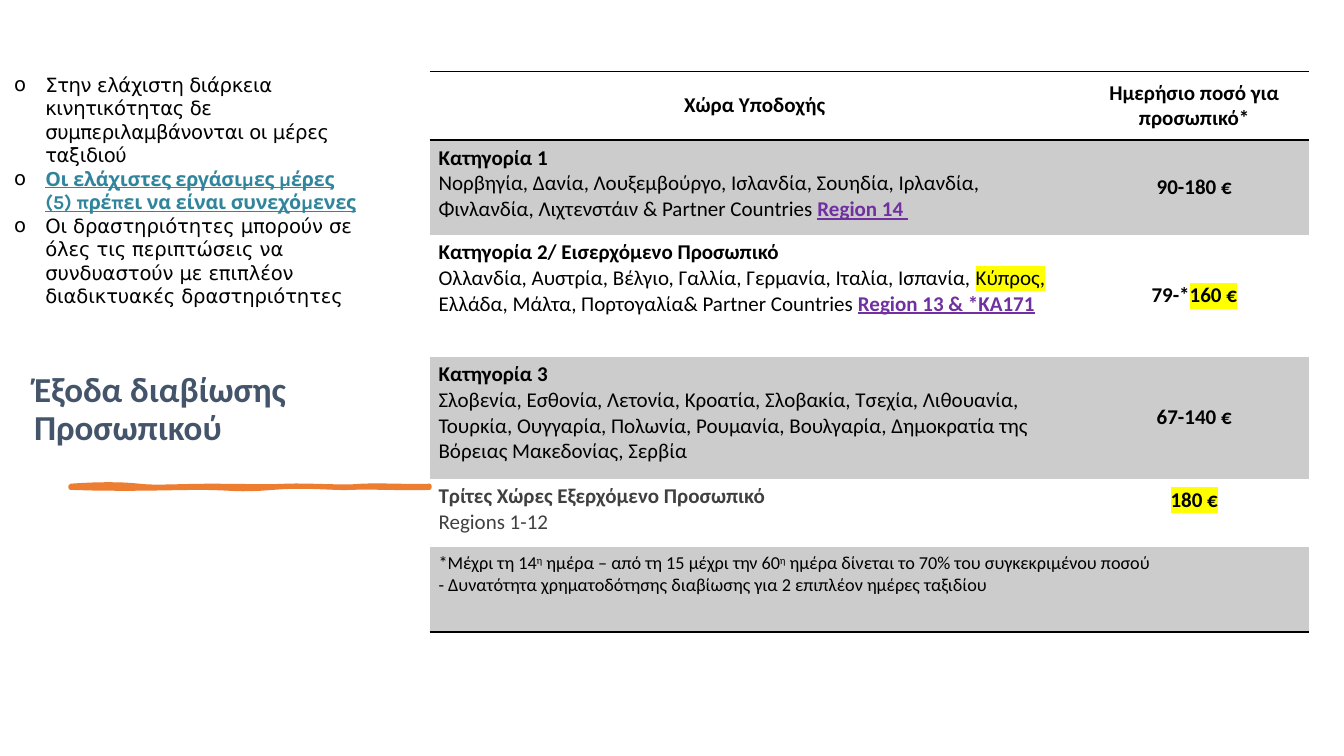
from pptx import Presentation, util as u
from pptx.dml.color import RGBColor
from pptx.enum import text
from pptx.oxml.ns import qn
from lxml import etree

PX = 9144  # 100 px to the inch
THEME = {
    "table_font": "Calibri", "rules_font": "DejaVu Sans", "key_rule_font": "Karla",
    "title_size": 25, "table_size": 15, "rules_size": 14, "note_size": 13,
    "ink": "000000", "title": "44546A", "muted": "404040", "region": "7030A0",
    "key_rule": "30859C", "brush": "ED7D31", "band": "CCCCCC", "marker": "FFFF00",
}
STYLES = {
    "plain": {},
    "bold": {"bold": True},
    "marked": {"marked": True},
    "bold marked": {"bold": True, "marked": True},
    "region": {"bold": True, "underline": True, "color": "region"},
    "muted": {"color": "muted"},
    "muted bold": {"bold": True, "color": "muted"},
    "note": {"size": "note_size"},
    "note raised": {"size": "note_size", "raised": True},
    "title": {"bold": True, "size": "title_size", "color": "title"},
    "rule": {"font": "rules_font", "size": "rules_size"},
    "key rule": {"font": "key_rule_font", "size": "rules_size", "color": "key_rule",
                 "bold": True, "underline": True},
}


def write(frame, paragraphs, align=text.PP_ALIGN.LEFT):
    """Fill a text frame with paragraphs made of (words, style) pairs."""
    for i, pairs in enumerate(paragraphs):
        paragraph = frame.paragraphs[0] if i == 0 else frame.add_paragraph()
        paragraph.alignment = align
        for words, style_name in pairs:
            style = STYLES[style_name]
            run = paragraph.add_run()
            run.text = words
            font = run.font
            font.name = THEME[style.get("font", "table_font")]
            font.size = u.Pt(THEME[style.get("size", "table_size")])
            font.bold = style.get("bold", False)
            font.underline = style.get("underline", False)
            font.color.rgb = RGBColor.from_string(THEME[style.get("color", "ink")])
            props = run._r.get_or_add_rPr()
            if style.get("raised"):
                props.set("baseline", "30000")
            if style.get("marked"):
                highlight = etree.Element(qn("a:highlight"))
                etree.SubElement(highlight, qn("a:srgbClr"), val=THEME["marker"])
                props.find(qn("a:solidFill")).addnext(highlight)


def rule_line(cell, side):
    """Draw a 1 pt line on the top (lnT) or bottom (lnB) of a cell."""
    line = etree.SubElement(cell._tc.get_or_add_tcPr(), qn("a:" + side), w="12700")
    fill = etree.SubElement(line, qn("a:solidFill"))
    etree.SubElement(fill, qn("a:srgbClr"), val=THEME["ink"])


prs = Presentation()
prs.slide_width, prs.slide_height = 1333 * PX, 750 * PX
slide = prs.slides.add_slide(prs.slide_layouts[6])

# Title
title = slide.shapes.add_textbox(24 * PX, 58 * PX, 391 * PX, 391 * PX).text_frame
title.word_wrap = True
title.vertical_anchor = text.MSO_ANCHOR.BOTTOM
write(title, [[("Έξοδα διαβίωσης Προσωπικού", "title")]])
title.paragraphs[0].line_spacing = 0.9
title.paragraphs[0].space_after = u.Pt(6)

# Brush stroke under the title: cubic curves along the top edge and back
curves = [
    [(97, 480), (121, 480), (138, 482)], [(155, 484), (177, 482), (209, 482)],
    [(241, 482), (260, 483), (284, 482)], [(308, 481), (339, 484), (359, 482)],
    [(379, 481), (412, 483), (426, 482)], [(426, 483), (426, 484), (426, 484)],
    [(408, 485), (364, 483), (348, 484)], [(332, 485), (304, 481), (270, 484)],
    [(235, 487), (231, 484), (199, 484)], [(166, 484), (132, 486), (70, 484)],
]
STEPS = 8
start = (70, 482)
outline = []
for c1, c2, end in curves:
    for step in range(1, STEPS + 1):
        t = step / STEPS
        weights = ((1 - t) ** 3, 3 * t * (1 - t) ** 2, 3 * t * t * (1 - t), t ** 3)
        outline.append(tuple(
            round(PX * sum(w * p[axis] for w, p in zip(weights, (start, c1, c2, end))))
            for axis in (0, 1)))
    start = end
builder = slide.shapes.build_freeform(70 * PX, 482 * PX)
builder.add_line_segments(outline, close=True)
brush = builder.convert_to_shape()
brush.shadow.inherit = False
brush.fill.solid()
brush.fill.fore_color.rgb = RGBColor.from_string(THEME["brush"])
brush.line.color.rgb = RGBColor.from_string(THEME["brush"])
brush.line.width = u.Pt(3)

# Daily rates: country group, amount, banded or not
rates = [
    ([[("Χώρα Υποδοχής", "bold")]], [("Ημερήσιο ποσό για προσωπικό*", "bold")], False),
    ([[("Κατηγορία 1", "bold")],
      [("Νορβηγία, Δανία, Λουξεμβούργο, Ισλανδία, Σουηδία, Ιρλανδία, Φινλανδία, "
        "Λιχτενστάιν & Partner Countries ", "plain"), ("Region 14 ", "region")]],
     [("90-180 €", "bold")], True),
    ([[("Κατηγορία 2/ Εισερχόμενο Προσωπικό", "bold")],
      [("Ολλανδία, Αυστρία, Βέλγιο, Γαλλία, Γερμανία, Ιταλία, Ισπανία, ", "plain"),
       ("Κύπρος, ", "marked"),
       ("Ελλάδα, Μάλτα, Πορτογαλία& Partner Countries ", "plain"),
       ("Region 13 & *ΚΑ171", "region")]],
     [("79-*", "bold"), ("160 €", "bold marked")], False),
    ([[("Κατηγορία 3", "bold")],
      [("Σλοβενία, Εσθονία, Λετονία, Κροατία, Σλοβακία, Τσεχία, Λιθουανία, Τουρκία, "
        "Ουγγαρία, Πολωνία, Ρουμανία, Βουλγαρία, Δημοκρατία της Bόρειας Μακεδονίας, "
        "Σερβία", "plain")]],
     [("67-140 €", "bold")], True),
    ([[("Τρίτες Χώρες Εξερχόμενο Προσωπικό", "muted bold")], [("Regions 1-12", "muted")]],
     [("180 €", "bold marked")], False),
    ([[("*Μέχρι τη 14", "note"), ("η", "note raised"),
       (" ημέρα – από τη 15 μέχρι την 60", "note"), ("η", "note raised"),
       (" ημέρα δίνεται το 70% του συγκεκριμένου ποσού", "note")],
      [("- Δυνατότητα χρηματοδότησης διαβίωσης για 2 επιπλέον ημέρες ταξιδίου", "note")]],
     [], True),
]
column_widths = (645, 227)
row_heights = (68, 94, 121, 121, 68, 84)
table = slide.shapes.add_table(len(rates), 2, 426 * PX, 71 * PX,
                               sum(column_widths) * PX, sum(row_heights) * PX).table
table.horz_banding = False
for column, width in zip(table.columns, column_widths):
    column.width = width * PX
last = len(rates) - 1
for r, (countries, amount, banded) in enumerate(rates):
    table.rows[r].height = row_heights[r] * PX
    for c, paragraphs in enumerate((countries, [amount])):
        cell = table.cell(r, c)
        cell.margin_left = cell.margin_right = 9 * PX
        cell.margin_top = cell.margin_bottom = 5 * PX
        centred = r == 0 or c == 1
        cell.vertical_anchor = text.MSO_ANCHOR.MIDDLE if centred else text.MSO_ANCHOR.TOP
        write(cell.text_frame, paragraphs,
              text.PP_ALIGN.CENTER if centred else text.PP_ALIGN.LEFT)
        if r == 0:
            rule_line(cell, "lnT")
        if r in (0, last):
            rule_line(cell, "lnB")
        if banded:
            cell.fill.solid()
            cell.fill.fore_color.rgb = RGBColor.from_string(THEME["band"])
        else:
            cell.fill.background()
table.cell(last - 1, 1).margin_bottom = 31 * PX
table.cell(last, 0).merge(table.cell(last, 1))
# "No Style, No Grid"
table._tbl.tblPr.find(qn("a:tableStyleId")).text = "{2D5ABB26-0587-4C30-8999-92F81FD0307C}"

# Mobility rules
rules = slide.shapes.add_textbox(13 * PX, 71 * PX, 344 * PX, 237 * PX).text_frame
rules.word_wrap = True
rules.margin_left = rules.margin_right = rules.margin_bottom = 0
rules.margin_top = 1 * PX
write(rules, [
    [("Στην ελάχιστη διάρκεια κινητικότητας δε συμπεριλαμβάνονται οι μέρες ταξιδιού", "rule")],
    [("Οι ελάχιστες εργάσιμες μέρες (5) πρέπει να είναι συνεχόμενες", "key rule")],
    [("Οι δραστηριότητες μπορούν σε όλες τις περιπτώσεις να συνδυαστούν με επιπλέον "
      "διαδικτυακές δραστηριότητες", "rule")],
])
for paragraph, tracking in zip(rules.paragraphs, (-30, -15, -10)):
    paragraph.runs[0].font._element.set("spc", str(tracking))
    props = paragraph._p.get_or_add_pPr()
    props.set("marL", str(32 * PX))
    props.set("indent", str(-31 * PX))
    bullet_color = etree.SubElement(props, qn("a:buClr"))
    etree.SubElement(bullet_color, qn("a:srgbClr"), val=THEME["ink"])
    etree.SubElement(props, qn("a:buFont"), typeface=THEME["rules_font"])
    etree.SubElement(props, qn("a:buChar"), char="o")

prs.save("out.pptx")
